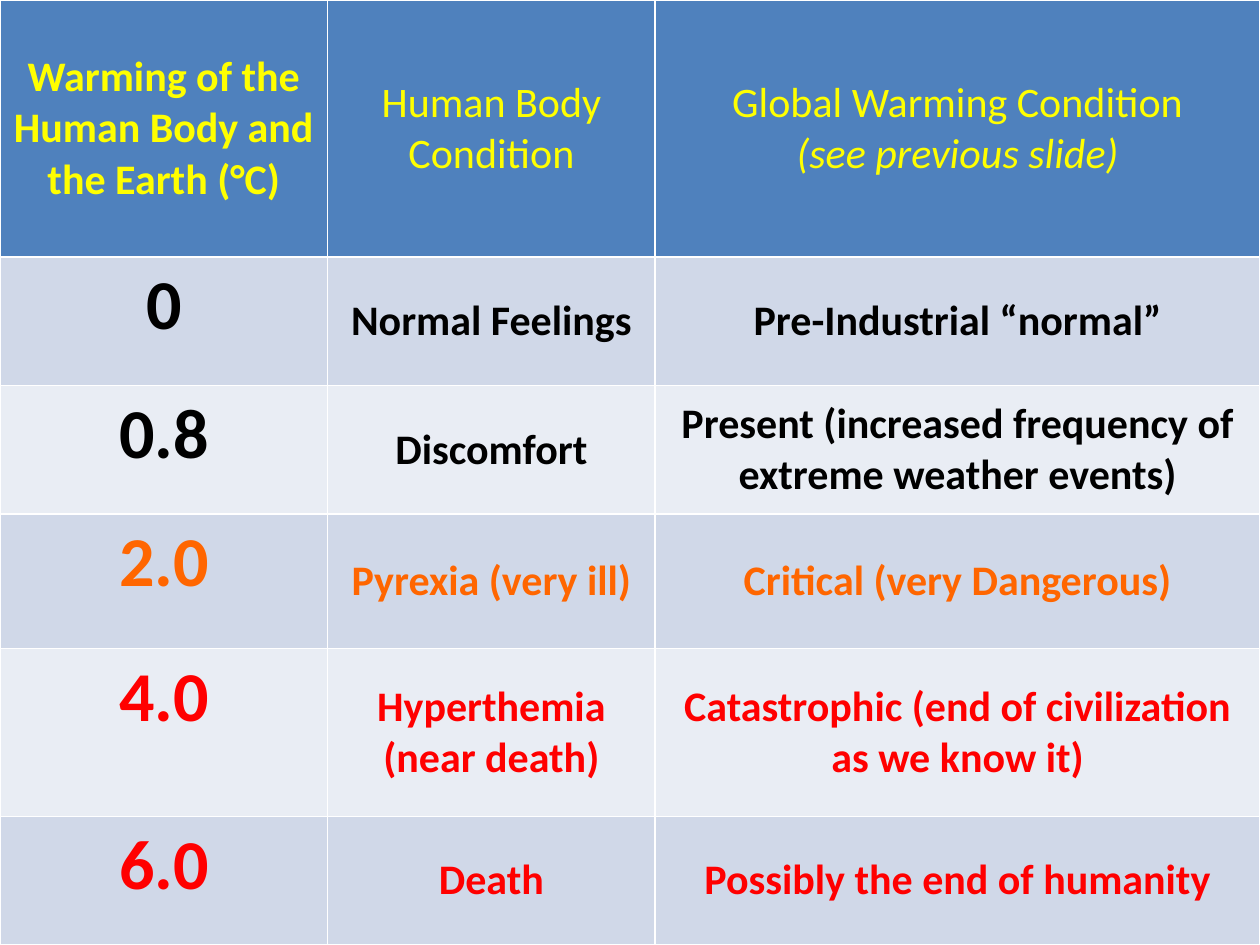
import dataclasses

import pptx
import pptx.dml.color
import pptx.enum.text
import pptx.table
import pptx.util

Inches = pptx.util.Inches
RGBColor = pptx.dml.color.RGBColor
Anchor = pptx.enum.text.MSO_ANCHOR


@dataclasses.dataclass(frozen=True)
class Theme:
    font: str = "Calibri"
    body_size: int = 24
    degree_size: int = 40
    backdrop: str = "000000"
    header_fill: str = "4F81BD"
    band_fills: tuple[str, str] = ("D0D8E8", "E9EDF4")
    header_text: str = "FFFF00"
    safe: str = "000000"
    critical: str = "FF6600"
    deadly: str = "FF0000"


@dataclasses.dataclass(frozen=True)
class WarmingLevel:
    degrees: str
    body: str
    globe: str
    color: str
    height: float = 1.02


THEME = Theme()
COLUMN_WIDTHS = (2.6, 2.6, 4.8)
HEADER_HEIGHT = 2.04
HEADINGS = (
    "Warming of the Human Body and the Earth (°C)",
    "Human Body Condition",
    "Global Warming Condition\n(see previous slide)",
)
LEVELS = (
    WarmingLevel("0", "Normal Feelings", "Pre-Industrial “normal”", THEME.safe),
    WarmingLevel(
        "0.8",
        "Discomfort",
        "Present (increased frequency of extreme weather events)",
        THEME.safe,
    ),
    WarmingLevel(
        "2.0", "Pyrexia (very ill)", "Critical (very Dangerous)", THEME.critical, 1.07
    ),
    WarmingLevel(
        "4.0",
        "Hyperthemia (near death)",
        "Catastrophic (end of civilization as we know it)",
        THEME.deadly,
        1.33,
    ),
    WarmingLevel("6.0", "Death", "Possibly the end of humanity", THEME.deadly),
)


def write_cell(
    cell: pptx.table._Cell,
    text: str,
    fill: str,
    color: str,
    size: int = THEME.body_size,
    bold: bool = True,
    anchor: Anchor = Anchor.MIDDLE,
) -> None:
    cell.fill.solid()
    cell.fill.fore_color.rgb = RGBColor.from_string(fill)
    cell.vertical_anchor = anchor
    cell.text_frame.text = text
    for paragraph in cell.text_frame.paragraphs:
        paragraph.alignment = pptx.enum.text.PP_ALIGN.CENTER
        for run in paragraph.runs:
            run.font.name = THEME.font
            run.font.size = pptx.util.Pt(size)
            run.font.bold = bold
            run.font.color.rgb = RGBColor.from_string(color)


def write_header(table: pptx.table.Table) -> None:
    for column, heading in enumerate(HEADINGS):
        write_cell(
            table.cell(0, column),
            heading,
            THEME.header_fill,
            THEME.header_text,
            bold=column == 0,
        )
    reference = table.cell(0, 2).text_frame.paragraphs[1]
    reference.runs[0].font.italic = True


def write_level(table: pptx.table.Table, row: int, level: WarmingLevel) -> None:
    fill = THEME.band_fills[(row - 1) % 2]
    write_cell(
        table.cell(row, 0),
        level.degrees,
        fill,
        level.color,
        size=THEME.degree_size,
        anchor=Anchor.TOP,
    )
    write_cell(table.cell(row, 1), level.body, fill, level.color)
    write_cell(table.cell(row, 2), level.globe, fill, level.color)


def main() -> None:
    presentation = pptx.Presentation()
    presentation.slide_width = Inches(10)
    presentation.slide_height = Inches(7.5)
    slide = presentation.slides.add_slide(presentation.slide_layouts[6])
    slide.background.fill.solid()
    slide.background.fill.fore_color.rgb = RGBColor.from_string(THEME.backdrop)

    warming = slide.shapes.add_table(
        len(LEVELS) + 1, len(HEADINGS), 0, 0, Inches(10), Inches(7.5)
    ).table
    for column, width in zip(warming.columns, COLUMN_WIDTHS):
        column.width = Inches(width)
    warming.rows[0].height = Inches(HEADER_HEIGHT)
    write_header(warming)
    for row, level in enumerate(LEVELS, start=1):
        warming.rows[row].height = Inches(level.height)
        write_level(warming, row, level)

    presentation.save("out.pptx")


if __name__ == "__main__":
    main()
